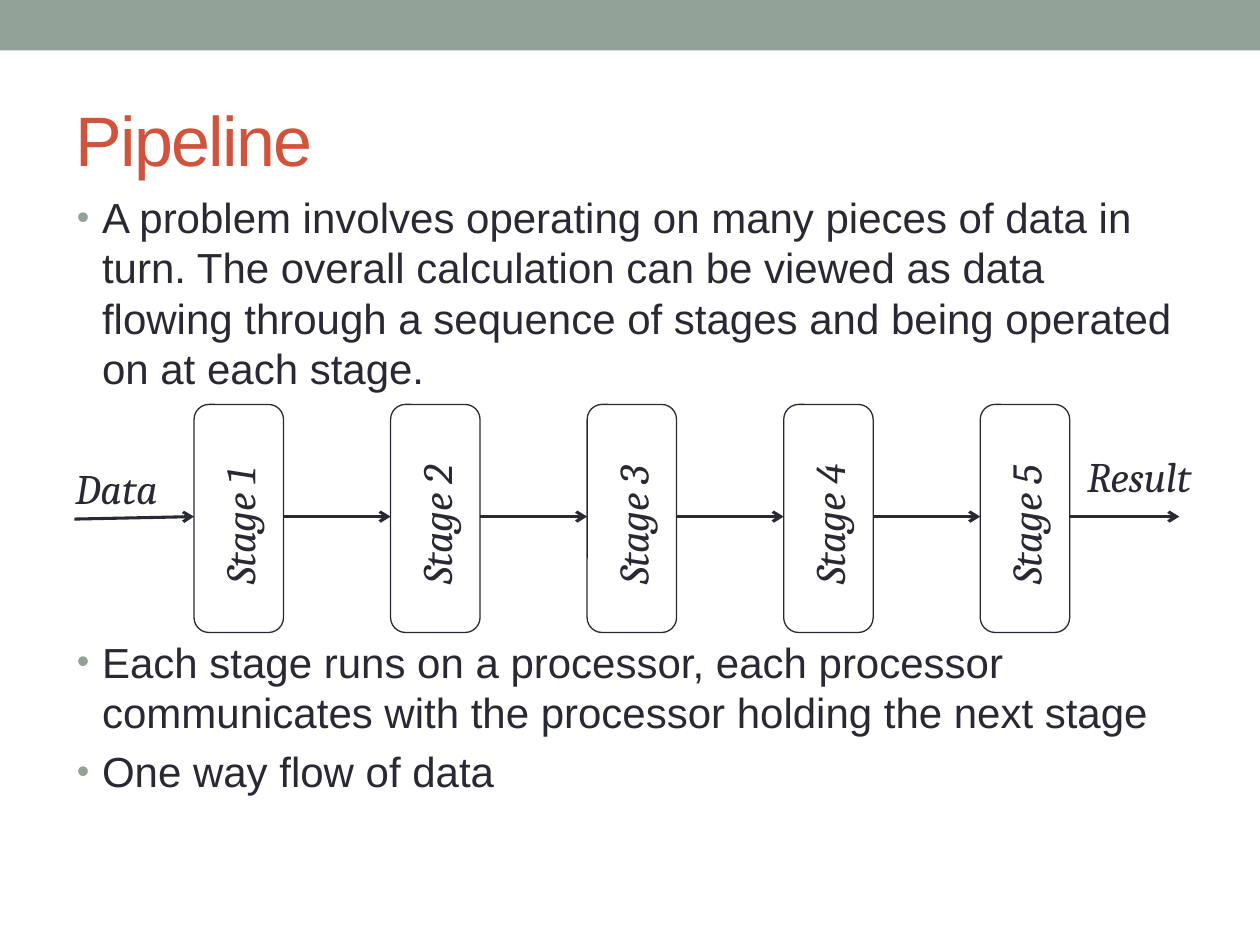
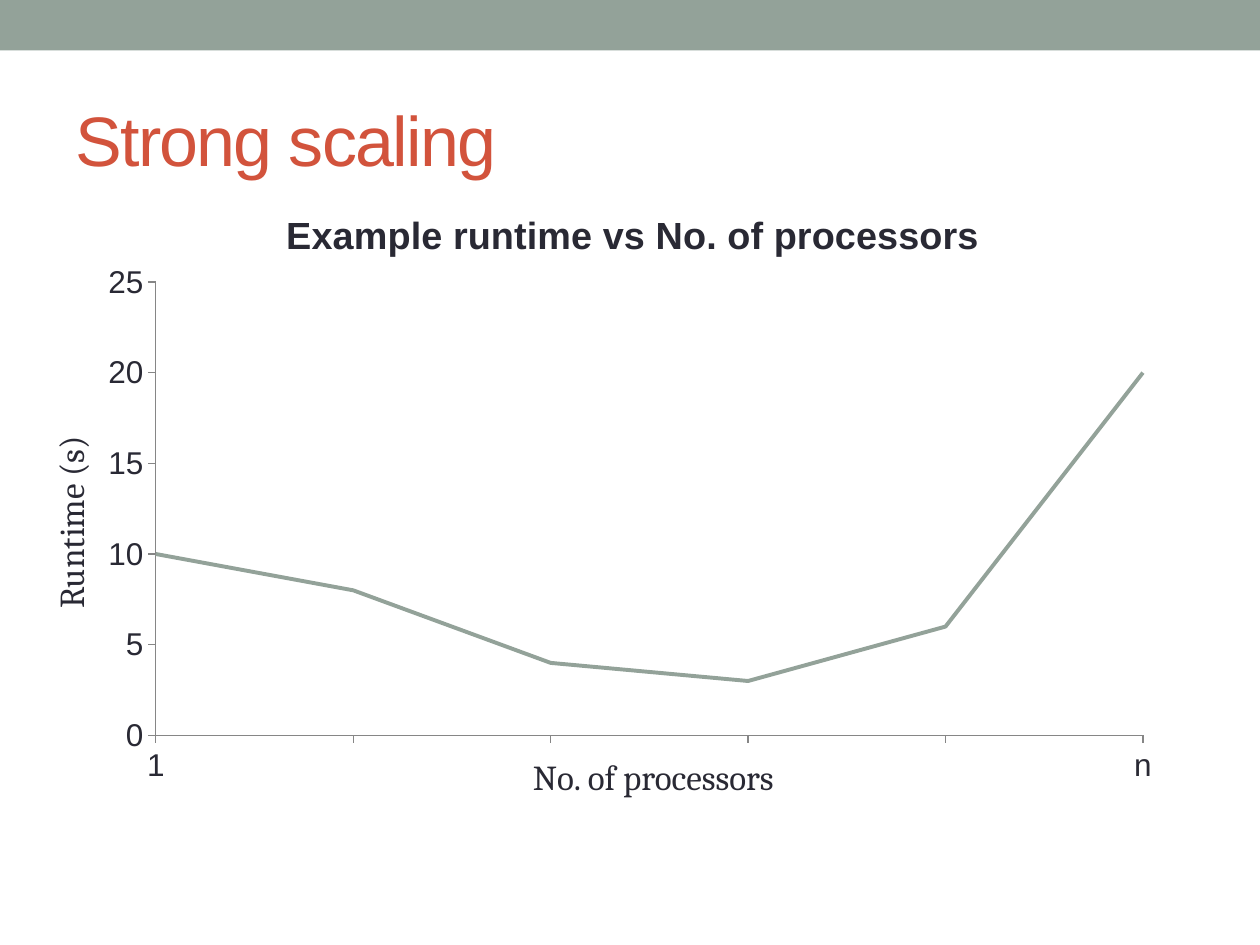
from dataclasses import dataclass
from typing import Optional

from lxml import etree
from pptx import Presentation
from pptx.chart.data import CategoryChartData
from pptx.dml.color import RGBColor
from pptx.enum.chart import XL_CHART_TYPE as ChartType, XL_TICK_MARK as Tick
from pptx.enum.shapes import MSO_CONNECTOR as Conn, MSO_SHAPE as Shape
from pptx.enum.text import MSO_ANCHOR as Anchor, MSO_AUTO_SIZE as Fit, PP_ALIGN as Align
from pptx.oxml import parse_xml
from pptx.oxml.ns import nsdecls, qn
from pptx.util import Inches, Pt

SAGE = RGBColor(0x93, 0xA2, 0x99)
RUST = RGBColor(0xD2, 0x53, 0x3C)
INK = RGBColor(0x29, 0x29, 0x34)
GREY = RGBColor(0x86, 0x86, 0x86)
SANS, SERIF = "Arial", "Cambria"

SLIDE_W, SLIDE_H = Inches(10), Inches(7.5)
COLS, ROWS = 100, 75


@dataclass(frozen=True)
class Box:
    col: float
    row: float
    cols: float
    rows: float

    def emu(self) -> tuple:
        return x(self.col), y(self.row), x(self.cols), y(self.rows)


@dataclass(frozen=True)
class Label:
    text: str
    box: Box
    size: int = 24
    italic: bool = True
    rotation: int = 0


@dataclass(frozen=True)
class Arrow:
    start: tuple
    end: tuple


@dataclass(frozen=True)
class Bullet:
    text: str
    before: Optional[float] = None


BAND = Box(0, 0, COLS, 4)
TITLE = Box(5, 5.8, 90, 10.4)
BODY = Box(5.1, 14.7, 90, 50.4)

BULLETS = [
    Bullet("A problem involves operating on many pieces of data in turn. "
           "The overall calculation can be viewed as data flowing through a "
           "sequence of stages and being operated on at each stage."),
    Bullet("Each stage runs on a processor, each processor communicates "
           "with the processor holding the next stage", 139),
    Bullet("One way flow of data", 4.8),
]

STAGE_COUNT = 5
STAGE_PITCH = 15.6
FIRST_STAGE = Box(15.4, 32.1, 7.1, 18.1)
FLOW_ROW = 41

RUNTIMES = [10, 8, 4, 3, 6, 20]
PROCESSORS = ["1", "", "", "", "", "n"]
CHART = Box(7.2, 14.7, 86.1, 48)
PLOT_SHARES = {"x": 0.06, "y": 0.16, "w": 0.91, "h": 0.75}
AXIS_LABELS = [
    Label("Runtime (s)", Box(-4.5, 37.2, 20, 4.2), 20, False, 270),
    Label("No. of processors", Box(41.3, 59.5, 22.2, 4.8), 20, False),
]


def x(cols: float) -> int:
    return round(SLIDE_W * cols / COLS)


def y(rows: float) -> int:
    return round(SLIDE_H * rows / ROWS)


def style(font, size: float, color: RGBColor = INK, name: str = SANS) -> None:
    font.name = name
    font.size = Pt(size)
    font.color.rgb = color


def place(sp, box: Box) -> None:
    sp.left, sp.top, sp.width, sp.height = box.emu()


def new_slide(prs, layout: int, title: str):
    slide = prs.slides.add_slide(prs.slide_layouts[layout])
    band = slide.shapes.add_shape(Shape.RECTANGLE, *BAND.emu())
    band.shadow.inherit = False
    band.fill.solid()
    band.fill.fore_color.rgb = SAGE
    band.line.fill.background()

    sp = slide.shapes.title
    place(sp, TITLE)
    tf = sp.text_frame
    tf.auto_size = Fit.NONE
    tf.vertical_anchor = Anchor.MIDDLE
    p = tf.paragraphs[0]
    p.alignment = Align.LEFT
    r = p.add_run()
    r.text = title
    style(r.font, 40, RUST)
    r._r.get_or_add_rPr().set("spc", "-100")
    return slide


def add_bullets(slide, bullets: list) -> None:
    sp = slide.placeholders[1]
    place(sp, BODY)
    tf = sp.text_frame
    tf.auto_size = Fit.NONE
    for i, bullet in enumerate(bullets):
        p = tf.add_paragraph() if i else tf.paragraphs[0]
        pPr = p._p.get_or_add_pPr()
        pPr.set("marL", str(Inches(0.2)))
        pPr.set("indent", str(-Inches(0.2)))
        color = etree.SubElement(pPr, qn("a:buClr"))
        etree.SubElement(color, qn("a:srgbClr")).set("val", str(SAGE))
        etree.SubElement(pPr, qn("a:buSzPct")).set("val", "85000")
        etree.SubElement(pPr, qn("a:buFont")).set("typeface", SANS)
        etree.SubElement(pPr, qn("a:buChar")).set("char", "•")
        p.space_before = Pt(bullet.before or 0)
        r = p.add_run()
        r.text = bullet.text
        style(r.font, 24)


def add_label(slide, label: Label) -> None:
    sp = slide.shapes.add_textbox(*label.box.emu())
    sp.rotation = label.rotation
    sp.text_frame.word_wrap = True
    r = sp.text_frame.paragraphs[0].add_run()
    r.text = label.text
    style(r.font, label.size, name=SERIF)
    r.font.italic = label.italic


def add_stage(slide, box: Box) -> None:
    sp = slide.shapes.add_shape(Shape.ROUNDED_RECTANGLE, *box.emu())
    sp.shadow.inherit = False
    sp.fill.background()
    sp.line.color.rgb = INK
    sp.line.width = Pt(0.75)


def add_arrow(slide, arrow: Arrow) -> None:
    (c1, r1), (c2, r2) = arrow.start, arrow.end
    sp = slide.shapes.add_connector(Conn.STRAIGHT, x(c1), y(r1), x(c2), y(r2))
    sp.line.color.rgb = INK
    sp.line.width = Pt(1.75)
    etree.SubElement(sp.line._get_or_add_ln(), qn("a:tailEnd")).set("type", "arrow")
    etree.SubElement(sp._element.spPr, qn("a:effectLst"))


def add_pipeline(slide) -> None:
    first = FIRST_STAGE
    lefts = [first.col + STAGE_PITCH * i for i in range(STAGE_COUNT)]
    rights = [left + first.cols for left in lefts]
    for left in lefts:
        add_stage(slide, Box(left, first.row, first.cols, first.rows))

    add_arrow(slide, Arrow((5.9, FLOW_ROW + 0.2), (lefts[0], FLOW_ROW)))
    for start, end in zip(rights, lefts[1:] + [93.6]):
        add_arrow(slide, Arrow((start, FLOW_ROW), (end, FLOW_ROW)))

    for i, left in enumerate(lefts, 1):
        add_label(slide, Label(f"Stage {i}", Box(left - 2.75, 38.6, 12.6, 5), rotation=270))
    add_label(slide, Label("Data", Box(5, 36.2, 11, 5)))
    add_label(slide, Label("Result", Box(85.3, 35.3, 11, 5)))


def set_plot_area(chart) -> None:
    area = chart._chartSpace.chart.plotArea
    for old in area.findall(qn("c:layout")):
        area.remove(old)
    modes = '<c:xMode val="edge"/><c:yMode val="edge"/>'
    shares = "".join(f'<c:{k} val="{v}"/>' for k, v in PLOT_SHARES.items())
    area.insert(0, parse_xml(
        f'<c:layout {nsdecls("c")}><c:manualLayout><c:layoutTarget val="inner"/>'
        f'{modes}{shares}</c:manualLayout></c:layout>'))
    unit = area.find(qn("c:valAx")).find(qn("c:majorUnit"))
    unit.addprevious(parse_xml(f'<c:crossBetween {nsdecls("c")} val="midCat"/>'))


def add_runtime_chart(slide) -> None:
    data = CategoryChartData()
    data.categories = PROCESSORS
    data.add_series("Series 1", RUNTIMES)
    chart = slide.shapes.add_chart(ChartType.LINE, *CHART.emu(), data).chart
    style(chart.font, 18)
    chart.has_legend = False
    chart.has_title = True
    r = chart.chart_title.text_frame.paragraphs[0].add_run()
    r.text = "Example runtime vs No. of processors"
    style(r.font, 21.6)
    r.font.bold = True

    for axis in (chart.category_axis, chart.value_axis):
        axis.has_major_gridlines = False
        axis.major_tick_mark = Tick.OUTSIDE
        axis.minor_tick_mark = Tick.NONE
        axis.format.line.color.rgb = GREY
        axis.format.line.width = Pt(0.75)
    chart.value_axis.minimum_scale = 0
    chart.value_axis.maximum_scale = 25
    chart.value_axis.major_unit = 5

    plot = chart.plots[0]
    plot.vary_by_categories = False
    series = plot.series[0]
    series.smooth = False
    series.format.line.color.rgb = SAGE
    series.format.line.width = Pt(2.25)
    set_plot_area(chart)


def main() -> None:
    prs = Presentation()
    prs.slide_width, prs.slide_height = SLIDE_W, SLIDE_H

    slide = new_slide(prs, 1, "Pipeline")
    add_bullets(slide, BULLETS)
    add_pipeline(slide)

    slide = new_slide(prs, 5, "Strong scaling")
    add_runtime_chart(slide)
    for label in AXIS_LABELS:
        add_label(slide, label)

    prs.save("out.pptx")


if __name__ == "__main__":
    main()
